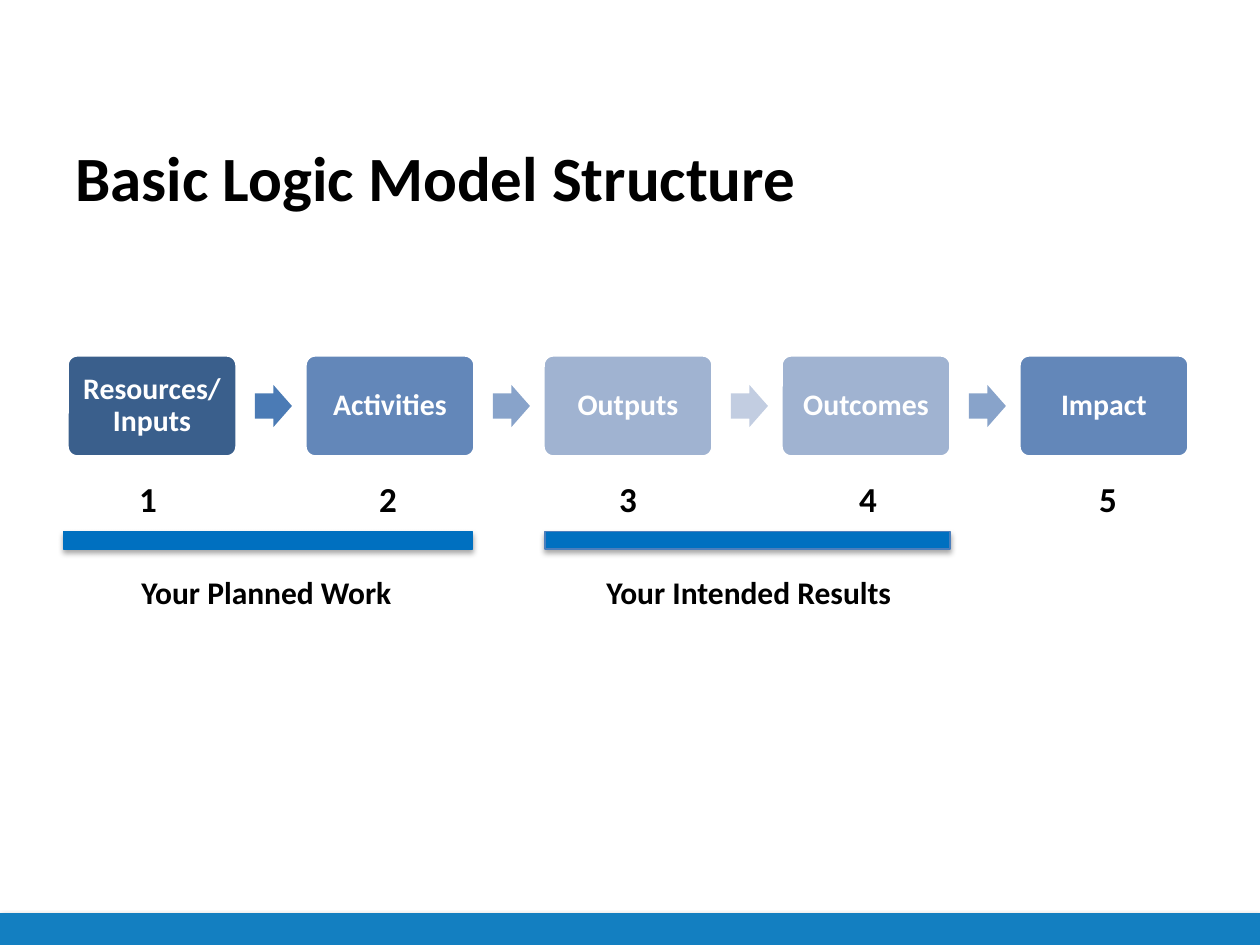
from lxml import etree
from pptx import Presentation
from pptx import util as u
from pptx.dml.color import RGBColor
from pptx.enum import shapes, text
from pptx.oxml import ns

PX = 914400 // 126
FONT = "Calibri"
COLORS = {
    "black": "000000", "white": "FFFFFF", "footer": "137FC1",
    "bar": "0070C0", "bar edge": "4B7EBC",
    "navy": "3A5F8C", "blue": "6387B9", "pale": "A0B3D1",
    "arrow dark": "4B7BB5", "arrow mid": "88A3CA", "arrow light": "C2CDE1",
}

# Content
TITLE = "Basic Logic Model Structure"
STEPS = [  # label, box colour, colour of the arrow that follows
    ("Resources/\vInputs", "navy", "arrow dark"),
    ("Activities", "blue", "arrow mid"),
    ("Outputs", "pale", "arrow light"),
    ("Outcomes", "pale", "arrow mid"),
    ("Impact", "blue", None),
]
PHASES = [  # label, label left and width, bar left and width, bar edge colour
    ("Your Planned Work", 67, 399, -10, 556, "bar"),
    ("Your Intended Results", 546, 406, 472, 551, "bar edge"),
]

# Layout in px
LEFT, BOX_TOP, BOX_WIDTH, BOX_HEIGHT, BOX_STEP = 67, 355, 170, 102, 238
ARROW_OFFSET, ARROW_WIDTH, ARROW_HEIGHT = 188, 37, 42
NUMBER_TOP, NUMBER_WIDTH, NUMBER_HEIGHT, NUMBER_STEP = 471, 162, 55, 240
BAR_TOP, BAR_HEIGHT, PHASE_TOP, PHASE_HEIGHT = 504, 73, 567, 50


def color(name):
    return RGBColor.from_string(COLORS[name])


def emu(*lengths):
    return [length * PX for length in lengths]


def write(shape, words, size, ink="black", align=text.PP_ALIGN.CENTER,
          anchor=text.MSO_ANCHOR.TOP, inset=None, spacing=None):
    frame = shape.text_frame
    frame.word_wrap = True
    frame.vertical_anchor = anchor
    if inset is not None:
        frame.margin_left = frame.margin_right = inset * PX
        frame.margin_top = frame.margin_bottom = inset * PX
    frame.text = words
    paragraph = frame.paragraphs[0]
    paragraph.alignment = align
    paragraph.line_spacing = spacing
    for run in paragraph.runs:
        run.font.name, run.font.size, run.font.bold = FONT, u.Pt(size), True
        run.font.color.rgb = color(ink)


def add_text(slide, box, words, size, **style):
    write(slide.shapes.add_textbox(*emu(*box)), words, size, **style)


def add_block(slide, kind, box, fill, edge=None, width=0, adjust=()):
    shape = slide.shapes.add_shape(kind, *emu(*box))
    shape.shadow.inherit = False
    shape.fill.solid()
    shape.fill.fore_color.rgb = color(fill)
    if edge:
        shape.line.color.rgb = color(edge)
        shape.line.width = u.Pt(width)
    else:
        shape.line.fill.background()
    for index, value in enumerate(adjust):
        shape.adjustments[index] = value
    return shape


def add_shadow(shape):
    effects = shape._element.spPr.find(ns.qn("a:effectLst"))
    shadow = etree.SubElement(effects, ns.qn("a:outerShdw"), blurRad="40000",
                              dist="23000", dir="5400000", rotWithShape="0")
    tint = etree.SubElement(shadow, ns.qn("a:srgbClr"), val=COLORS["black"])
    etree.SubElement(tint, ns.qn("a:alpha"), val="35000")


def main():
    presentation = Presentation()
    presentation.slide_width, presentation.slide_height = emu(1260, 945)
    slide = presentation.slides.add_slide(presentation.slide_layouts[6])
    kinds = shapes.MSO_SHAPE

    # Footer band and title
    add_shadow(add_block(slide, kinds.RECTANGLE, (0, 913, 1260, 32), "footer"))
    add_text(slide, (63, 132, 1134, 158), TITLE, 36, align=text.PP_ALIGN.LEFT)

    # Chain of steps with arrows between them
    for index, (label, fill, arrow) in enumerate(STEPS):
        left = LEFT + index * BOX_STEP
        box = add_block(slide, kinds.ROUNDED_RECTANGLE,
                        (left, BOX_TOP, BOX_WIDTH, BOX_HEIGHT),
                        fill, "white", 2, [0.1])
        write(box, label, 17, ink="white", anchor=text.MSO_ANCHOR.MIDDLE,
              inset=12, spacing=0.9)
        if arrow:
            arrow_top = BOX_TOP + (BOX_HEIGHT - ARROW_HEIGHT) // 2
            add_block(slide, kinds.RIGHT_ARROW,
                      (left + ARROW_OFFSET, arrow_top, ARROW_WIDTH, ARROW_HEIGHT),
                      arrow, adjust=[0.6, 0.5])

    # Bars that span the phases
    for label, left, width, bar_left, bar_width, edge in PHASES:
        add_shadow(add_block(slide, kinds.MATH_MINUS,
                             (bar_left, BAR_TOP, bar_width, BAR_HEIGHT),
                             "bar", edge, 0.75))

    # Step numbers and phase labels
    for index in range(len(STEPS)):
        add_text(slide, (LEFT + index * NUMBER_STEP, NUMBER_TOP,
                         NUMBER_WIDTH, NUMBER_HEIGHT), str(index + 1), 20)
    for label, left, width, *_ in PHASES:
        add_text(slide, (left, PHASE_TOP, width, PHASE_HEIGHT), label, 18)

    presentation.save("out.pptx")


if __name__ == "__main__":
    main()
